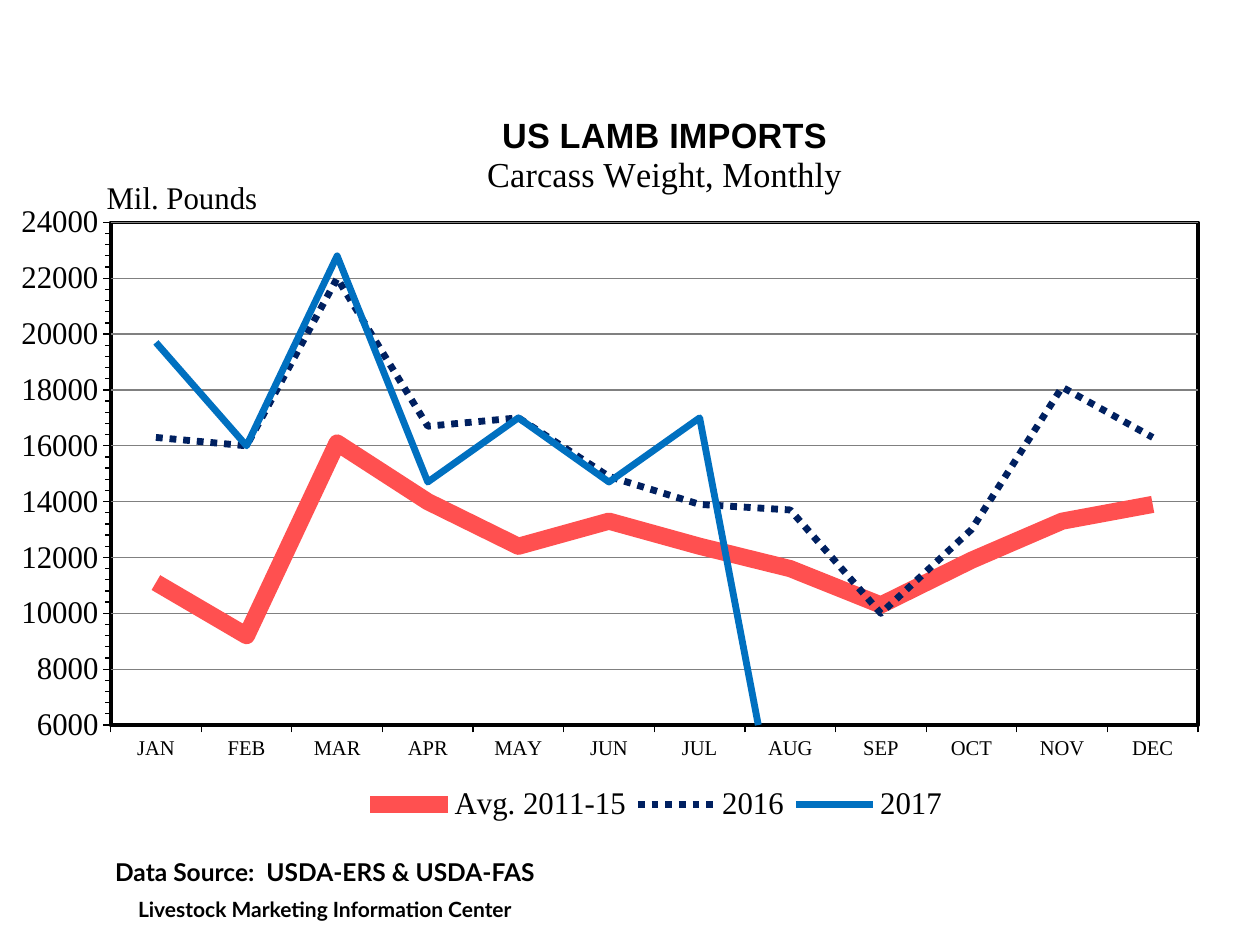
"""Build a slide charting monthly US lamb imports."""
from dataclasses import dataclass

from lxml import etree
from pptx import Presentation
from pptx import util as u
from pptx.chart import data as cd
from pptx.dml.color import RGBColor
from pptx.enum import chart as ce, dml, text
from pptx.oxml import ns


@dataclass(frozen=True)
class Theme:
    """Colours, fonts and type sizes."""
    ink: str = "000000"
    paper: str = "FFFFFF"
    grid: str = "808080"
    red: str = "FF5050"
    navy: str = "002060"
    blue: str = "0070C0"
    serif: str = "Times New Roman"
    sans: str = "Arial"
    note: str = "Lato"
    head: int = 20
    body: int = 18
    source: int = 14
    small: int = 12


def style(font, face, size, color, bold=False):
    """Set the look of a font."""
    font.name, font.size, font.bold = face, u.Pt(size), bold
    font.color.rgb = RGBColor.from_string(color)


def write(frame, words, first=False, align=None, before=0, **look):
    """Add one formatted paragraph to a text frame."""
    para = frame.paragraphs[0] if first else frame.add_paragraph()
    para.alignment = align
    if before:
        para.space_before = u.Pt(before)
    run = para.add_run()
    run.text = words
    style(run.font, **look)


def stroke(line, color, width, dash=None):
    """Set the colour, width and dash of a line."""
    line.color.rgb = RGBColor.from_string(color)
    line.width = u.Pt(width)
    if dash:
        line.dash_style = dash


def place(node, spot, index, inner=False):
    """Give a chart part a manual layout in fractions of the chart."""
    old = node.find(ns.qn("c:layout"))
    if old is not None:
        node.remove(old)
    box = etree.Element(ns.qn("c:layout"))
    man = etree.SubElement(box, ns.qn("c:manualLayout"))
    rows = [("layoutTarget", "inner")] if inner else []
    rows += [("xMode", "edge"), ("yMode", "edge"), *zip("xywh", spot)]
    for tag, val in rows:
        etree.SubElement(man, ns.qn(f"c:{tag}")).set("val", str(val))
    node.insert(index, box)


def frame_plot(area, color, line, width):
    """Fill the plot area and draw its border."""
    sp = etree.SubElement(area, ns.qn("c:spPr"))
    edge = etree.Element(ns.qn("a:ln"), w=str(u.Pt(width)))
    for home, tint in ((sp, color), (edge, line)):
        fill = etree.SubElement(home, ns.qn("a:solidFill"))
        etree.SubElement(fill, ns.qn("a:srgbClr"), val=tint)
    sp.append(edge)


class Deck:
    """Hold the theme and the current slide."""

    def __init__(self, theme):
        """Open a blank slide."""
        self.look = theme
        self.show = Presentation()
        self.show.slide_width, self.show.slide_height = u.Inches(10), u.Inches(7.5)
        self.slide = self.show.slides.add_slide(self.show.slide_layouts[6])

    def chart(self, spot, months, years):
        """Add the line chart with its titles, axes and legend."""
        t = self.look
        data = cd.CategoryChartData()
        data.categories = months
        for name, vals, *_ in years:
            data.add_series(name, vals + [None] * (len(months) - len(vals)))
        chart = self.slide.shapes.add_chart(
            ce.XL_CHART_TYPE.LINE, *map(u.Inches, spot), data).chart
        style(chart.font, t.serif, t.body, t.ink)
        for line, (_, _, color, width, dash) in zip(chart.plots[0].series, years):
            stroke(line.format.line, color, width, dash)
            line.smooth = False
            line.marker.style = ce.XL_MARKER_STYLE.NONE
        self.titles(chart)
        self.axes(chart)
        chart.has_legend = True
        legend = chart.legend
        legend.position = ce.XL_LEGEND_POSITION.BOTTOM
        legend.include_in_layout = False
        style(legend.font, t.serif, t.body, t.ink)
        place(legend._element, (0.26, 0.94, 0.5, 0.06), 1)
        root = chart._chartSpace
        area = root.find(".//" + ns.qn("c:plotArea"))
        place(area, (0.052, 0.185, 0.913, 0.674), 0, inner=True)
        frame_plot(area, t.paper, t.ink, 2.25)
        root.find(".//" + ns.qn("c:dispBlanksAs")).set("val", "zero")

    def titles(self, chart):
        """Write the chart title and the level value axis title."""
        t = self.look
        chart.has_title = True
        frame = chart.chart_title.text_frame
        write(frame, "US LAMB IMPORTS", first=True,
              face=t.sans, size=t.head, color=t.ink, bold=True)
        write(frame, "Carcass Weight, Monthly",
              face=t.serif, size=t.head, color=t.ink)
        place(chart.chart_title._element, (0.365, 0.035), 1)
        title = chart.value_axis.axis_title
        write(title.text_frame, "Mil. Pounds", first=True,
              face=t.serif, size=t.body, color=t.ink)
        body = title._element.find(".//" + ns.qn("a:bodyPr"))
        body.set("rot", "0")
        body.set("vert", "horz")
        place(title._element, (0.044, 0.118), 1)

    def axes(self, chart):
        """Set scales, ticks and gridlines."""
        t = self.look
        cat, val = chart.category_axis, chart.value_axis
        for axis, size in ((cat, t.small), (val, t.body)):
            style(axis.tick_labels.font, t.serif, size, t.ink)
            stroke(axis.format.line, t.ink, 0.75)
            axis.major_tick_mark = ce.XL_TICK_MARK.OUTSIDE
        val.minor_tick_mark = ce.XL_TICK_MARK.OUTSIDE
        val.minimum_scale, val.maximum_scale = 6000, 24000
        val.major_unit, val.minor_unit = 2000, 400
        val.tick_labels.number_format = "General"
        val.tick_labels.number_format_is_linked = False
        val.has_major_gridlines = True
        stroke(val.major_gridlines.format.line, t.grid, 0.75)

    def note(self, spot, lines):
        """Add a centred text box of bold lines, each half a line apart."""
        frame = self.slide.shapes.add_textbox(*map(u.Inches, spot)).text_frame
        frame.word_wrap = True
        frame.auto_size = text.MSO_AUTO_SIZE.SHAPE_TO_FIT_TEXT
        for i, (words, size) in enumerate(lines):
            write(frame, words, first=i == 0, align=text.PP_ALIGN.CENTER,
                  before=size / 2, face=self.look.note, size=size,
                  color=self.look.ink, bold=True)


def main():
    """Draw the slide and save it."""
    t = Theme()
    deck = Deck(t)
    months = "JAN FEB MAR APR MAY JUN JUL AUG SEP OCT NOV DEC".split()
    years = [
        ("Avg. 2011-15", [11100, 9200, 16100, 14000, 12400, 13300, 12400,
                          11600, 10300, 11900, 13300, 13900], t.red, 10, None),
        ("2016", [16300, 16000, 22000, 16700, 17000, 14900, 13900,
                  13700, 10000, 13000, 18100, 16300],
         t.navy, 4, dml.MSO_LINE.ROUND_DOT),
        ("2017", [19700, 16000, 22800, 14700, 17000, 14700, 17000],
         t.blue, 4, None),
    ]
    deck.chart((0.17, 0.67, 9.67, 5.92), months, years)
    deck.note((0.33, 6.75, 4.5, 0.64), [
        ("Data Source:  USDA-ERS & USDA-FAS", t.source),
        ("Livestock Marketing Information Center", t.small),
    ])
    deck.show.save("out.pptx")


if __name__ == "__main__":
    main()
